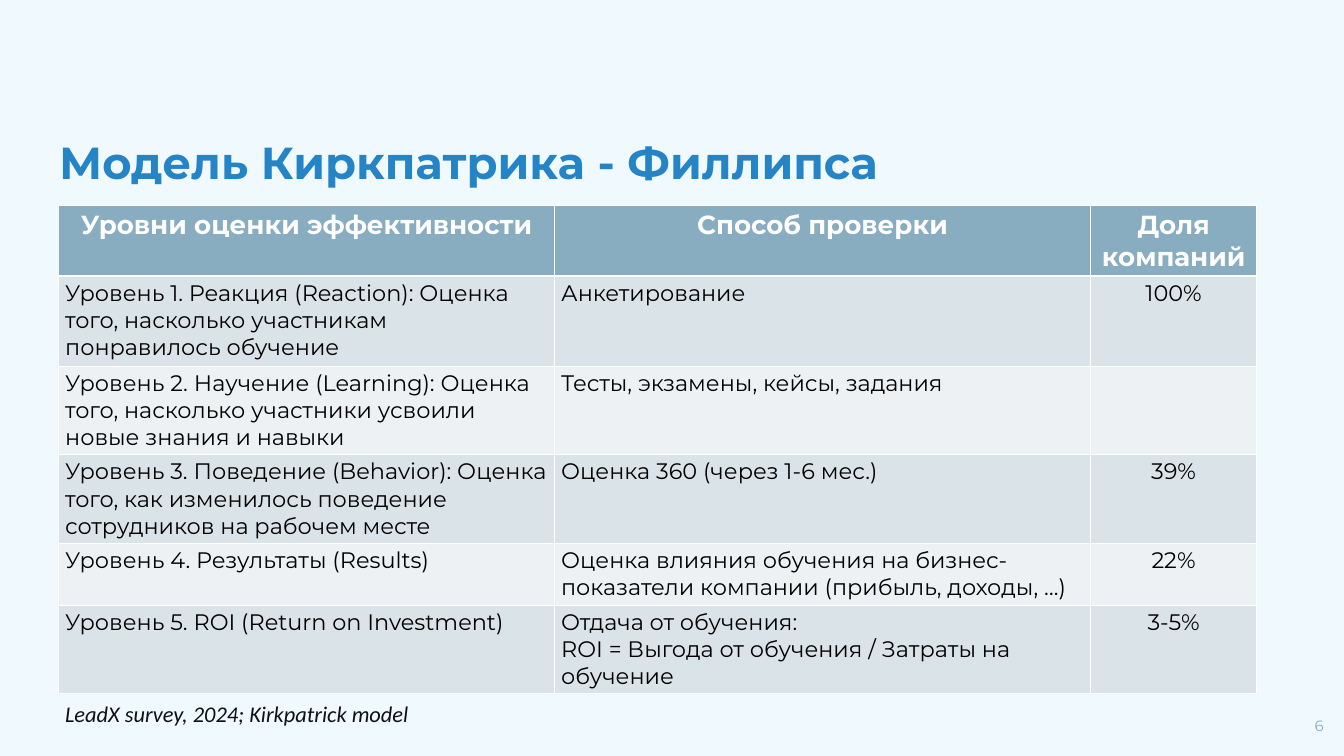
from lxml import etree
from pptx import Presentation
from pptx.dml.color import RGBColor
from pptx.enum.text import MSO_ANCHOR, MSO_AUTO_SIZE, PP_ALIGN
from pptx.oxml.ns import qn
from pptx.util import Inches, Pt

LEFT, CENTER, RIGHT = PP_ALIGN.LEFT, PP_ALIGN.CENTER, PP_ALIGN.RIGHT
TOP, MIDDLE = MSO_ANCHOR.TOP, MSO_ANCHOR.MIDDLE
FIT_NONE, FIT_SHAPE = MSO_AUTO_SIZE.NONE, MSO_AUTO_SIZE.SHAPE_TO_FIT_TEXT

TITLE = "Модель Киркпатрика - Филлипса"
HEADER = ["Уровни оценки эффективности", "Способ проверки", "Доля компаний"]
LEVELS = [
    ("Уровень 1. Реакция (Reaction): Оценка того, насколько участникам понравилось обучение",
     "Анкетирование", "100%"),
    ("Уровень 2. Научение (Learning): Оценка того, насколько участники усвоили новые знания и навыки",
     "Тесты, экзамены, кейсы, задания", ""),
    ("Уровень 3. Поведение (Behavior): Оценка того, как изменилось поведение сотрудников на рабочем месте",
     "Оценка 360 (через 1-6 мес.)", "39%"),
    ("Уровень 4. Результаты (Results)",
     "Оценка влияния обучения на бизнес-показатели компании (прибыль, доходы, …)", "22%"),
    ("Уровень 5. ROI (Return on Investment)",
     "Отдача от обучения: \nROI = Выгода от обучения / Затраты на обучение", "3-5%"),
]
SOURCE = "LeadX survey, 2024; Kirkpatrick model"
PAGE = "6"

COL_WIDTHS = [7.38, 7.98, 2.47]
ROW_HEIGHTS = [0.74, 1.34, 0.74, 0.74, 0.74, 0.74]
TABLE_BOX = (0.87, 3.06, 17.83, 6.78)
HEAD_FILL, BANDS = "88ACC0", ("DAE3E8", "EDF1F4")
SIDES = ("a:lnL", "a:lnR", "a:lnT", "a:lnB")


def rgb(value):
    """Turn a hex string into a colour."""
    return RGBColor.from_string(value)


def write(p, text, size, color, font="Montserrat", align=LEFT, bold=False, italic=False):
    """Add text to a paragraph, with a line break at each newline."""
    p.alignment = align
    for i, line in enumerate(text.split("\n")):
        if i:
            p.add_line_break()
        r = p.add_run()
        r.text = line
        r.font.name, r.font.size = font, Pt(size)
        r.font.bold, r.font.italic = bold, italic
        r.font.color.rgb = rgb(color)


def place(sp, box):
    """Set the position and size of a shape in inches."""
    sp.left, sp.top, sp.width, sp.height = map(Inches, box)


def frame(sp, inset, anchor, fit=FIT_NONE, wrap=True):
    """Set the text frame's margins and fit, and return its first paragraph."""
    tf = sp.text_frame
    tf.auto_size, tf.word_wrap, tf.vertical_anchor = fit, wrap, anchor
    if inset:
        tf.margin_left = tf.margin_right = tf.margin_top = tf.margin_bottom = Inches(inset)
    return tf.paragraphs[0]


def style_cell(cell, fill, bottom):
    """Fill a cell and draw its white borders."""
    tcPr = cell._tc.get_or_add_tcPr()
    for side in SIDES:
        width = bottom if side == "a:lnB" else 1
        ln = etree.SubElement(tcPr, qn(side), w=str(Pt(width)))
        solid = etree.SubElement(ln, qn("a:solidFill"))
        etree.SubElement(solid, qn("a:srgbClr"), val="FFFFFF")
    cell.fill.solid()
    cell.fill.fore_color.rgb = rgb(fill)


def add_levels(s):
    """Add the table of evaluation levels."""
    rows = [HEADER, *LEVELS]
    gf = s.shapes.add_table(len(rows), len(HEADER), *map(Inches, TABLE_BOX))
    table = gf.table
    for col, width in zip(table.columns, COL_WIDTHS):
        col.width = Inches(width)
    for row, height in zip(table.rows, ROW_HEIGHTS):
        row.height = Inches(height)
    place(gf, TABLE_BOX)
    for i, texts in enumerate(rows):
        head = i == 0
        for j, text in enumerate(texts):
            cell = table.cell(i, j)
            style_cell(cell, HEAD_FILL if head else BANDS[(i - 1) % 2], 3 if head else 1)
            if text:
                write(cell.text_frame.paragraphs[0], text, 28 if head else 24,
                      "FFFFFF" if head else "000000",
                      align=CENTER if head or j == 2 else LEFT, bold=head)


def main():
    """Build the slide and save it."""
    prs = Presentation()
    prs.slide_width, prs.slide_height = Inches(20), Inches(11.25)
    s = prs.slides.add_slide(prs.slide_layouts[5])
    s.background.fill.solid()
    s.background.fill.fore_color.rgb = rgb("F0F9FE")

    title = s.shapes.title
    place(title, (0.68, 1.81, 18.64, 1.25))
    write(frame(title, 0.2, TOP), TITLE, 48, "2484C6", bold=True)

    add_levels(s)

    number = s.shapes.add_textbox(*map(Inches, (18.7, 10.37, 1.2, 0.86)))
    write(frame(number, 0.2, MIDDLE), PAGE, 16, "88ACC0", align=RIGHT)

    source = s.shapes.add_textbox(*map(Inches, (0.87, 10.37, 5.97, 0.5)))
    write(frame(source, None, TOP, FIT_SHAPE, False), SOURCE, 24, "0F1115",
          font="Calibri", italic=True)

    prs.save("out.pptx")


if __name__ == "__main__":
    main()
